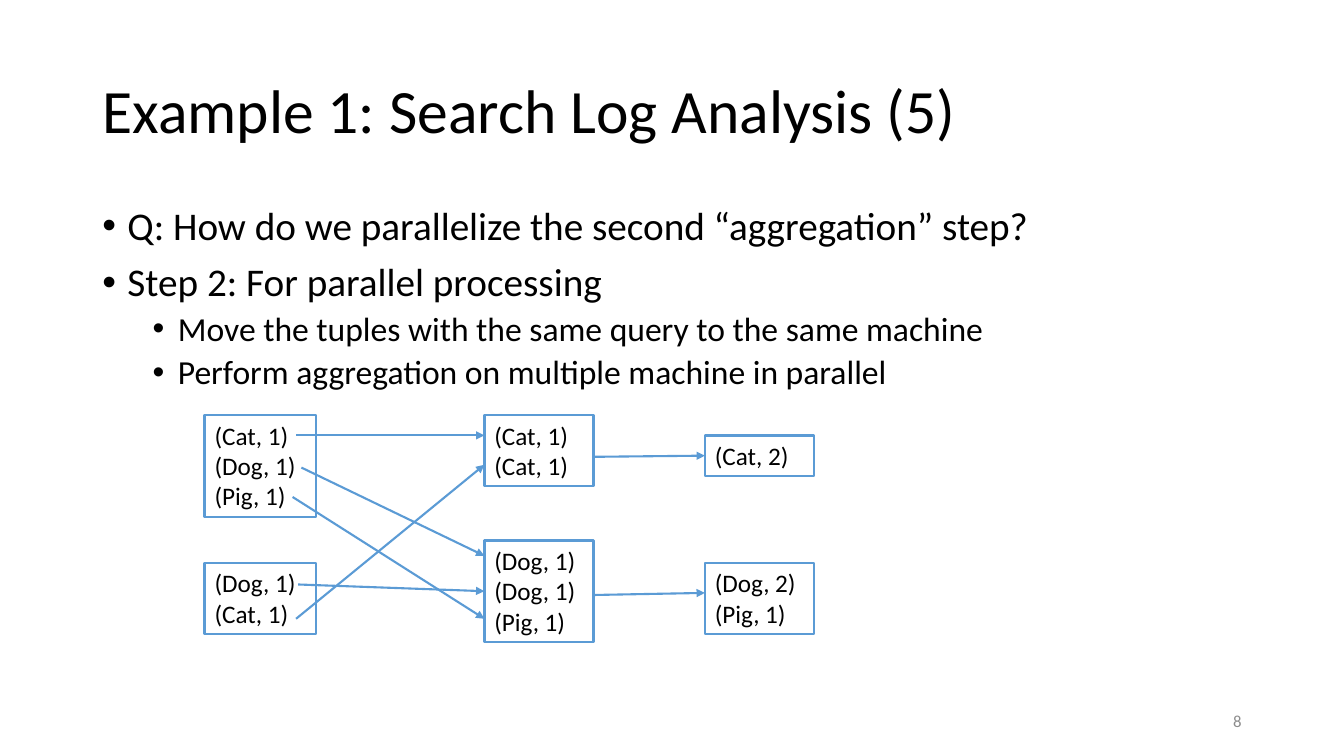
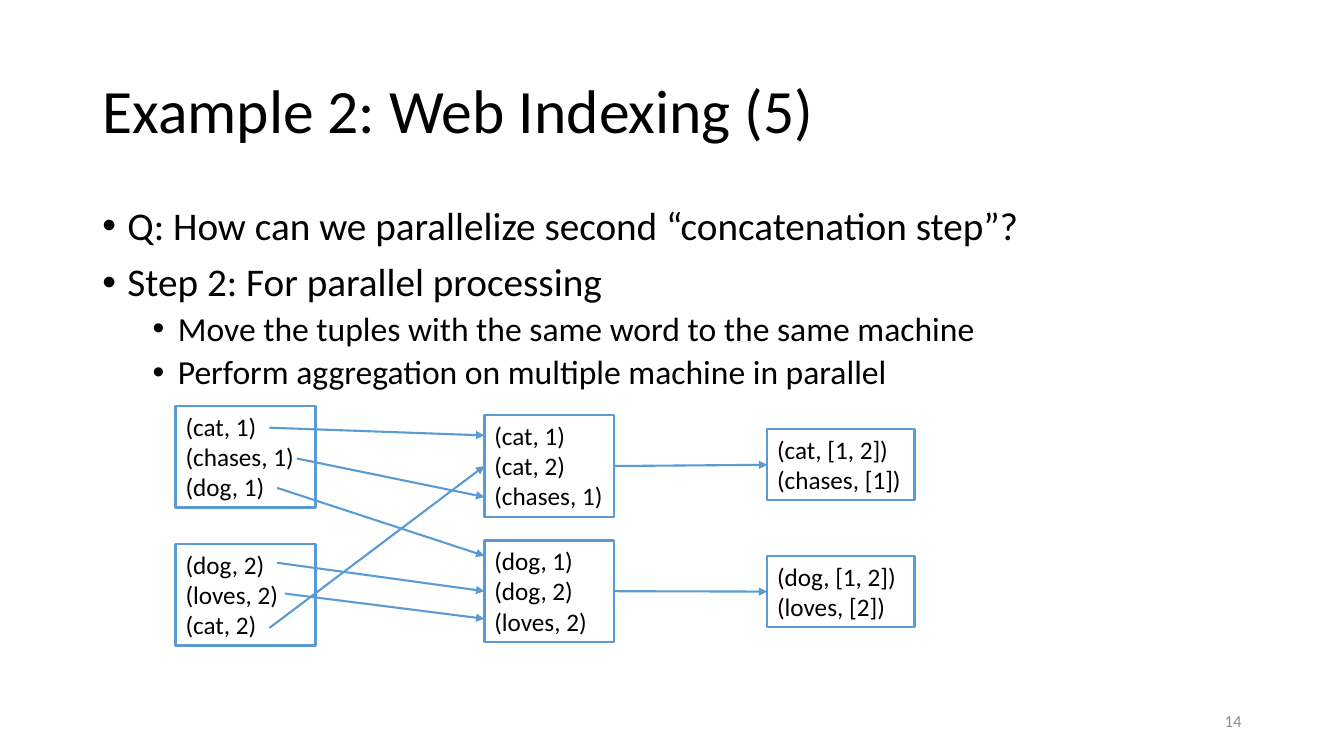
from pptx import Presentation
from pptx.dml.color import RGBColor
from pptx.enum.shapes import MSO_CONNECTOR, MSO_SHAPE
from pptx.enum.text import MSO_ANCHOR, PP_ALIGN
from pptx.oxml.ns import qn
from pptx.util import Pt
from lxml.etree import SubElement

COLOURS = {"text": "000000", "line": "5B9BD5", "number": "8C8C8C"}
FONT = "Calibri"
TITLE_ONLY = 5
MARGIN, CONTENT_WIDTH = 66, 828
TUPLE_HEIGHT, BOX_PADDING = 21.8, 7.2
LEFT, RIGHT = 1, 3  # connection sites of a rectangle
# Level of a bullet: size, left indent, space before
BULLET_LEVELS = [(28, 18, 10), (24, 54, 5)]

# Boxes: left, width, then (top, tuples) from top to bottom
# Shuffle arrows: start x, start y, machine index, tip y (None = middle of side)
# Result arrows: start y, tip y (None = middle of side)
SLIDES = [
    {
        "title": "Example 1: Search Log Analysis (5)",
        "question": "Q: How do we parallelize the second “aggregation” step?",
        "key": "query",
        "number": "8",
        "sources": (146.2, 79.6, [(296.6, "(Cat, 1)\n(Dog, 1)\n(Pig, 1)"),
                                  (402, "(Dog, 1)\n(Cat, 1)")]),
        "machines": (346, 78, [(296.6, "(Cat, 1)\n(Cat, 1)"),
                               (386, "(Dog, 1)\n(Dog, 1)\n(Pig, 1)")]),
        "results": (503.5, 78, [(311, "(Cat, 2)"),
                                (402, "(Dog, 2)\n(Pig, 1)")]),
        "shuffle": [(211.5, 311, 0, 311), (215.3, 334, 1, 397),
                    (209, 355, 1, 442), (213, 417.5, 1, None),
                    (211.5, 442, 0, 332)],
        "reduce": [(326.3, None), (425, 423.5)],
    },
    {
        "title": "Example 2: Web Indexing (5)",
        "question": "Q: How can we parallelize second “concatenation step”?",
        "key": "word",
        "number": "14",
        "sources": (125.5, 100, [(290, "(cat, 1)\n(chases, 1)\n(dog, 1)"),
                                 (388.6, "(dog, 2)\n(loves, 2)\n(cat, 2)")]),
        "machines": (346, 92.8, [(296.6, "(cat, 1)\n(cat, 2)\n(chases, 1)"),
                                 (386, "(dog, 1)\n(dog, 2)\n(loves, 2)")]),
        "results": (548, 105.4, [(306.6, "(cat, [1, 2])\n(chases, [1])"),
                                 (397.2, "(dog, [1, 2])\n(loves, [2])")]),
        "shuffle": [(192.5, 305.5, 0, 311), (212, 327.5, 0, 355),
                    (198, 348.5, 1, 397), (198, 402, 1, None),
                    (203.5, 424, 1, 442), (192.5, 448.5, 0, None)],
        "reduce": [(None, None), (None, None)],
    },
]


def colour(name):
    return RGBColor.from_string(COLOURS[name])


def style_text(paragraph, size, colour_name="text", align=PP_ALIGN.LEFT):
    paragraph.alignment = align
    for run in paragraph.runs:
        run.font.name = FONT
        run.font.size = Pt(size)
        run.font.color.rgb = colour(colour_name)


def add_title(slide, text):
    title = slide.shapes.title
    title.left, title.top = Pt(MARGIN), Pt(28.8)
    title.width, title.height = Pt(CONTENT_WIDTH), Pt(104.4)
    frame = title.text_frame
    frame.text = text
    frame.vertical_anchor = MSO_ANCHOR.MIDDLE
    frame.paragraphs[0].line_spacing = 0.9
    style_text(frame.paragraphs[0], 44)


def add_bullets(slide, items):
    box = slide.shapes.add_textbox(Pt(MARGIN), Pt(144), Pt(CONTENT_WIDTH), Pt(342.7))
    frame = box.text_frame
    frame.word_wrap = True
    frame.text = "\n".join(text for _, text in items)
    for paragraph, (level, _) in zip(frame.paragraphs, items):
        size, indent, space = BULLET_LEVELS[level]
        paragraph.level = level
        paragraph.line_spacing = 0.9
        paragraph.space_before = Pt(space)
        style_text(paragraph, size)
        properties = paragraph._p.get_or_add_pPr()
        properties.set("marL", str(Pt(indent)))
        properties.set("indent", str(Pt(-18)))
        SubElement(properties, qn("a:buFont")).set("typeface", "Arial")
        SubElement(properties, qn("a:buChar")).set("char", "•")


def add_slide_number(slide, number):
    box = slide.shapes.add_textbox(Pt(678), Pt(500.5), Pt(216), Pt(28.8))
    frame = box.text_frame
    frame.word_wrap = True
    frame.vertical_anchor = MSO_ANCHOR.MIDDLE
    frame.text = number
    style_text(frame.paragraphs[0], 12, "number", PP_ALIGN.RIGHT)


def add_tuple_box(slide, left, top, width, tuples):
    height = BOX_PADDING + TUPLE_HEIGHT * len(tuples.split("\n"))
    box = slide.shapes.add_shape(
        MSO_SHAPE.RECTANGLE, Pt(left), Pt(top), Pt(width), Pt(height))
    box.shadow.inherit = False
    box.fill.background()
    box.line.color.rgb = colour("line")
    box.line.width = Pt(1.75)
    frame = box.text_frame
    frame.margin_right = 0
    frame.vertical_anchor = MSO_ANCHOR.TOP
    frame.text = tuples
    for paragraph in frame.paragraphs:
        style_text(paragraph, 18)
    return box


def add_column(slide, left, width, boxes):
    return [add_tuple_box(slide, left, top, width, tuples) for top, tuples in boxes]


def add_arrow(slide, start_x, start_y, target, tip_y, origin=None):
    """Draw an arrow to the left side of target; a y of None joins the middle."""
    arrow = slide.shapes.add_connector(
        MSO_CONNECTOR.STRAIGHT, start_x, Pt(start_y or 0), target.left, Pt(tip_y or 0))
    if start_y is None:
        arrow.begin_connect(origin, RIGHT)
    if tip_y is None:
        arrow.end_connect(target, LEFT)
    arrow.line.color.rgb = colour("line")
    arrow.line.width = Pt(1.5)
    SubElement(arrow.line._get_or_add_ln(), qn("a:tailEnd")).set("type", "triangle")
    SubElement(arrow._element.spPr, qn("a:effectLst"))


def add_data_flow(slide, content):
    add_column(slide, *content["sources"])
    machines = add_column(slide, *content["machines"])
    results = add_column(slide, *content["results"])
    # Tuples move to their machine
    for start_x, start_y, index, tip_y in content["shuffle"]:
        add_arrow(slide, Pt(start_x), start_y, machines[index], tip_y)
    # Each machine aggregates its own tuples
    for machine, result, (start_y, tip_y) in zip(machines, results, content["reduce"]):
        add_arrow(slide, machine.left + machine.width, start_y, result, tip_y, machine)


def main():
    deck = Presentation()
    deck.slide_width, deck.slide_height = Pt(960), Pt(540)
    for content in SLIDES:
        slide = deck.slides.add_slide(deck.slide_layouts[TITLE_ONLY])
        add_title(slide, content["title"])
        add_bullets(slide, [
            (0, content["question"]),
            (0, "Step 2: For parallel processing"),
            (1, f"Move the tuples with the same {content['key']} to the same machine"),
            (1, "Perform aggregation on multiple machine in parallel"),
        ])
        add_slide_number(slide, content["number"])
        add_data_flow(slide, content)
    deck.save("out.pptx")


if __name__ == "__main__":
    main()
